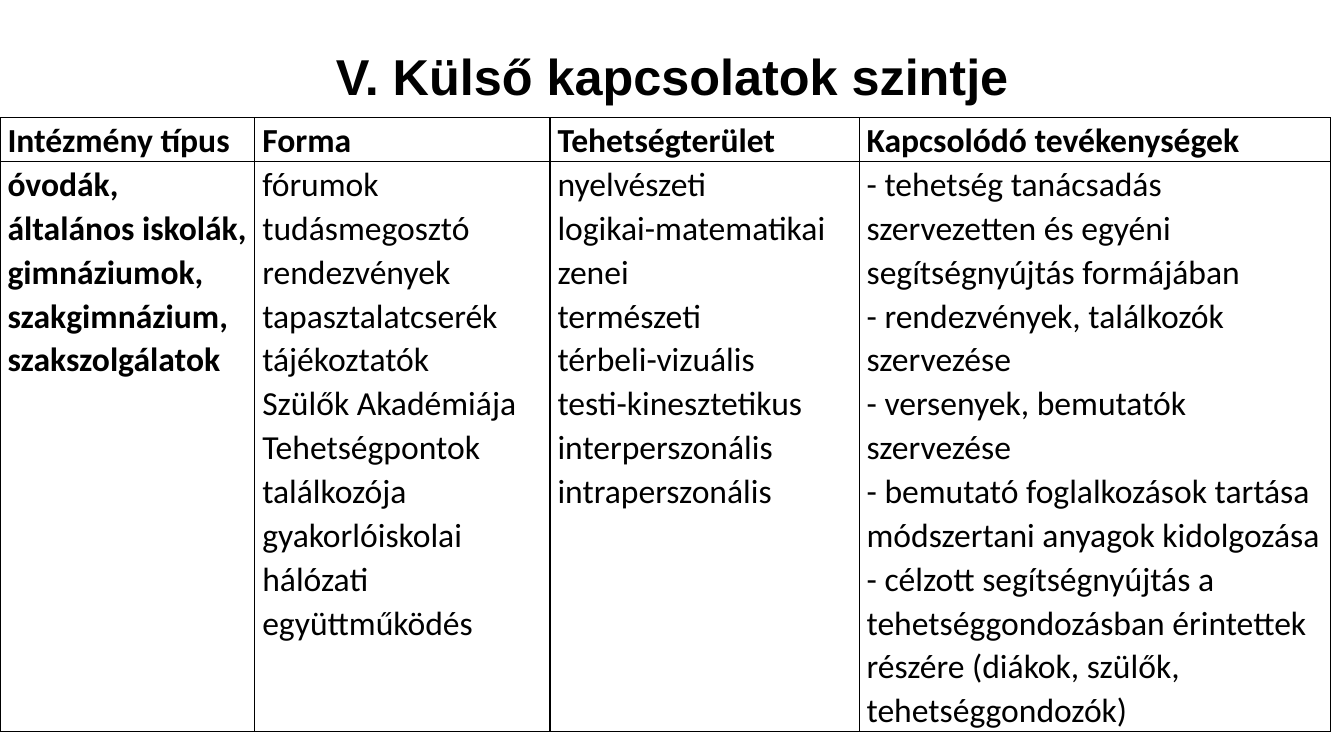
from lxml import etree
from pptx import Presentation
from pptx.dml.color import RGBColor
from pptx.enum import text
from pptx.oxml import ns
from pptx.util import Cm, Pt

BLACK = RGBColor(0, 0, 0)
TITLE_ONLY = 5
COLUMN_WIDTHS = [6.42, 7.44, 7.79, 11.88]
ROW_HEIGHTS = [1.1, 14.36]
HEADINGS = ["Intézmény típus", "Forma", "Tehetségterület", "Kapcsolódó tevékenységek"]
DETAILS = [
    ["óvodák, általános iskolák, gimnáziumok, szakgimnázium, szakszolgálatok"],
    [
        "fórumok",
        "tudásmegosztó rendezvények",
        "tapasztalatcserék",
        "tájékoztatók",
        "Szülők Akadémiája",
        "Tehetségpontok találkozója",
        "gyakorlóiskolai hálózati együttműködés",
    ],
    [
        "nyelvészeti",
        "logikai-matematikai",
        "zenei",
        "természeti",
        "térbeli-vizuális",
        "testi-kinesztetikus",
        "interperszonális",
        "intraperszonális",
    ],
    [
        "- tehetség tanácsadás szervezetten és egyéni segítségnyújtás formájában",
        "- rendezvények, találkozók szervezése",
        "- versenyek, bemutatók szervezése",
        "- bemutató foglalkozások tartása",
        "módszertani anyagok kidolgozása",
        "- célzott segítségnyújtás a tehetséggondozásban érintettek részére "
        "(diákok, szülők, tehetséggondozók)",
    ],
]


def format_text(frame, font_name, size, bold, line_spacing, alignment):
    for para in frame.paragraphs:
        para.line_spacing = line_spacing
        para.alignment = alignment
        for span in para.runs:
            span.font.name = font_name
            span.font.size = Pt(size)
            span.font.bold = bold
            span.font.color.rgb = BLACK


def add_title(page, wording):
    title = page.shapes.title
    title.left, title.top = Cm(2.34), Cm(1.02)
    title.width, title.height = Cm(29.21), Cm(1.96)
    frame = title.text_frame
    frame.text = wording
    frame.vertical_anchor = text.MSO_ANCHOR.MIDDLE
    format_text(frame, "Arial", 36, True, 0.9, text.PP_ALIGN.CENTER)


def add_borders(cell):
    """Draw a thin black line on all four sides of the cell."""
    properties = cell._tc.get_or_add_tcPr()
    for side in ("a:lnL", "a:lnR", "a:lnT", "a:lnB"):
        line = etree.SubElement(properties, ns.qn(side), w=str(Pt(1)))
        fill = etree.SubElement(line, ns.qn("a:solidFill"))
        etree.SubElement(fill, ns.qn("a:srgbClr"), val=str(BLACK))


def fill_cell(cell, lines, bold):
    cell.margin_left = cell.margin_right = Cm(0.19)
    cell.margin_top = cell.margin_bottom = 0
    cell.text_frame.text = "\n".join(lines)
    format_text(cell.text_frame, "Calibri", 24, bold, 1.07, text.PP_ALIGN.LEFT)
    add_borders(cell)
    cell.fill.background()


def add_contacts_table(page):
    frame = page.shapes.add_table(
        len(ROW_HEIGHTS), len(COLUMN_WIDTHS), 0, Cm(2.97),
        Cm(sum(COLUMN_WIDTHS)), Cm(sum(ROW_HEIGHTS)))
    table = frame.table
    table.first_row = table.horz_banding = False
    for row, height in zip(table.rows, ROW_HEIGHTS):
        row.height = Cm(height)
    for index, width in enumerate(COLUMN_WIDTHS):
        table.columns[index].width = Cm(width)
        fill_cell(table.cell(0, index), [HEADINGS[index]], True)
        fill_cell(table.cell(1, index), DETAILS[index], index == 0)


def main():
    deck = Presentation()
    deck.slide_width, deck.slide_height = Cm(33.87), Cm(19.05)
    page = deck.slides.add_slide(deck.slide_layouts[TITLE_ONLY])
    add_title(page, "V. Külső kapcsolatok szintje")
    add_contacts_table(page)
    deck.save("out.pptx")


if __name__ == "__main__":
    main()
